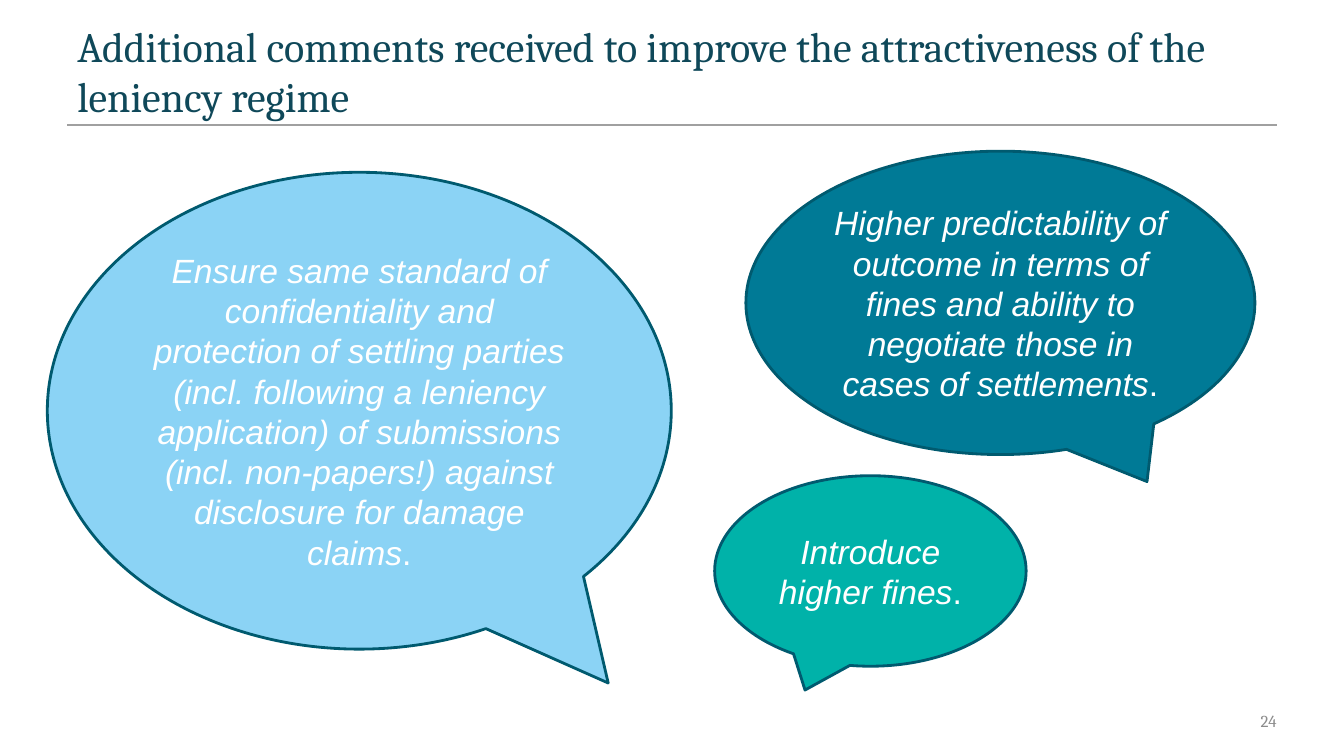
import pptx
import pptx.util
import pptx.dml.color
import pptx.enum.shapes
import pptx.enum.text
import pptx.oxml.ns
import lxml.etree

Pt = pptx.util.Pt
ALIGN = pptx.enum.text.PP_ALIGN
ANCHOR = pptx.enum.text.MSO_ANCHOR

COLORS = {
    "title": "0F4859",
    "rule": "A0A0A0",
    "page": "8C8C8C",
    "outline": "005A6F",
    "white": "FFFFFF",
    "teal": "00B2A9",
    "petrol": "007A96",
    "sky": "8BD3F5",
}

COMMENTS = [
    ("Introduce higher fines", "teal", (510.5, 339.8, 222.5, 136.1), (-0.21, 0.625)),
    ("Higher predictability of outcome in terms of fines and ability to negotiate "
     "those in cases of settlements", "petrol", (532.8, 108, 363.6, 216.7), (0.288, 0.589)),
    ("Ensure same standard of confidentiality and protection of settling parties "
     "(incl. following a leniency application) of submissions (incl. non-papers!) "
     "against disclosure for damage claims", "sky", (33.8, 123.1, 445.7, 340.6), (0.399, 0.571)),
]


def rgb(name):
    return pptx.dml.color.RGBColor.from_string(COLORS[name])


def add_run(paragraph, text, font, size, color, italic=False):
    run = paragraph.add_run()
    run.text = text
    run.font.name = font
    run.font.size = Pt(size)
    run.font.italic = italic
    run.font.color.rgb = rgb(color)


def set_title(slide, text):
    title = slide.shapes.title
    title.left, title.top, title.width, title.height = Pt(48), Pt(41.8), Pt(864), Pt(48.2)
    frame = title.text_frame
    frame.auto_size = pptx.enum.text.MSO_AUTO_SIZE.NONE
    frame.word_wrap = True
    frame.vertical_anchor = ANCHOR.BOTTOM
    heading = frame.paragraphs[0]
    heading.alignment = ALIGN.LEFT
    add_run(heading, text, "Cambria", 30, "title")


def add_rule(slide):
    rule = slide.shapes.add_connector(
        pptx.enum.shapes.MSO_CONNECTOR.STRAIGHT, Pt(48), Pt(89.3), Pt(912), Pt(89.3))
    rule.line.color.rgb = rgb("rule")
    rule.line.width = Pt(1)
    lxml.etree.SubElement(rule._element.spPr, pptx.oxml.ns.qn("a:effectLst"))


def add_page_number(slide, number):
    page = slide.shapes.add_textbox(Pt(696), Pt(500.4), Pt(216), Pt(28.8))
    frame = page.text_frame
    frame.word_wrap = True
    frame.margin_right = 0
    frame.vertical_anchor = ANCHOR.MIDDLE
    frame.paragraphs[0].alignment = ALIGN.RIGHT
    add_run(frame.paragraphs[0], number, "Cambria", 12, "page")


def add_comment(slide, text, fill, box, tip):
    bubble = slide.shapes.add_shape(
        pptx.enum.shapes.MSO_SHAPE.OVAL_CALLOUT, *(Pt(length) for length in box))
    bubble.adjustments[0], bubble.adjustments[1] = tip
    bubble.shadow.inherit = False
    bubble.fill.solid()
    bubble.fill.fore_color.rgb = rgb(fill)
    bubble.line.color.rgb = rgb("outline")
    bubble.line.width = Pt(2)
    frame = bubble.text_frame
    frame.word_wrap = True
    frame.vertical_anchor = ANCHOR.MIDDLE
    quote = frame.paragraphs[0]
    quote.alignment = ALIGN.CENTER
    add_run(quote, text, "Arial", 24, "white", italic=True)
    add_run(quote, ".", "Arial", 24, "white")


def main():
    deck = pptx.Presentation()
    deck.slide_width, deck.slide_height = Pt(960), Pt(540)
    slide = deck.slides.add_slide(deck.slide_layouts[5])
    add_rule(slide)
    set_title(slide, "Additional comments received to improve the attractiveness "
                     "of the leniency regime")
    add_page_number(slide, "24")
    for comment in COMMENTS:
        add_comment(slide, *comment)
    deck.save("out.pptx")


if __name__ == "__main__":
    main()
